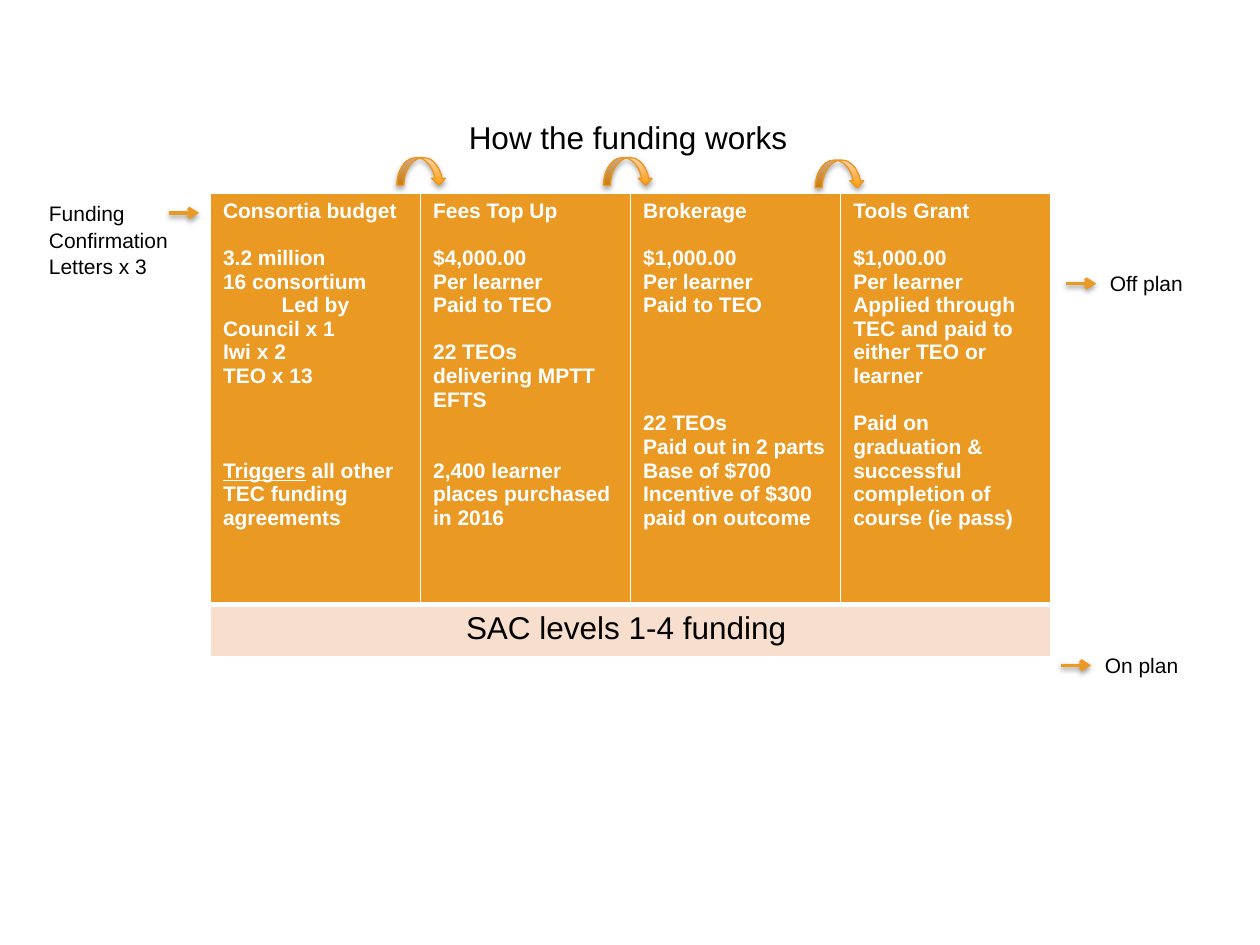
from lxml import etree
from pptx import Presentation
from pptx.dml.color import RGBColor
from pptx.enum.shapes import MSO_CONNECTOR, MSO_SHAPE
from pptx.enum.text import PP_ALIGN
from pptx.oxml import parse_xml
from pptx.oxml.ns import nsdecls, qn
from pptx.util import Inches, Pt

STRAIGHT = MSO_CONNECTOR.STRAIGHT
CURVED_DOWN = MSO_SHAPE.CURVED_DOWN_ARROW
LEFT, CENTER = PP_ALIGN.LEFT, PP_ALIGN.CENTER
FONT = "Arial"
LINE_PT = 13.5
COLORS = {
    "orange": "EA9922", "peach": "F7DECD", "white": "FFFFFF", "black": "000000",
    "outline": "EA971C", "deep": "FF9D0D", "pale": "FFD2B3",
}

# Each column is a list of blocks, set apart by the given number of lines.
COLUMNS = [
    [(0, ["Consortia budget"]),
     (1, ["3.2 million", "16 consortium", "Led by", "Council x 1", "Iwi x 2", "TEO x 13"]),
     (3, ["Triggers all other TEC funding agreements"])],
    [(0, ["Fees Top Up"]),
     (1, ["$4,000.00", "Per learner", "Paid to TEO"]),
     (1, ["22 TEOs delivering MPTT", "EFTS"]),
     (2, ["2,400 learner places purchased in 2016"])],
    [(0, ["Brokerage"]),
     (1, ["$1,000.00", "Per learner", "Paid to TEO"]),
     (4, ["22 TEOs", "Paid out in 2 parts", "Base of $700",
          "Incentive of $300 paid on outcome"])],
    [(0, ["Tools Grant"]),
     (1, ["$1,000.00", "Per learner",
          "Applied through TEC and paid to either TEO or learner"]),
     (1, ["Paid on graduation & successful completion of course (ie pass)"])],
]
CENTERED = {"Led by"}
UNDERLINED = "Triggers"


def rgb(name):
    return RGBColor.from_string(COLORS[name])


def add_run(p, text, size, color="black", bold=False, underline=False):
    r = p.add_run()
    r.text = text
    r.font.name, r.font.size = FONT, Pt(size)
    r.font.bold, r.font.underline = bold, underline
    r.font.color.rgb = rgb(color)


def add_shadow(sp, alpha, dist):
    sp._element.spPr.append(parse_xml(
        f'<a:effectLst {nsdecls("a")}><a:outerShdw blurRad="{Pt(3.1)}" dist="{Pt(dist)}" '
        f'dir="5400000" rotWithShape="0"><a:srgbClr val="{COLORS["black"]}">'
        f'<a:alpha val="{alpha * 1000}"/></a:srgbClr></a:outerShdw></a:effectLst>'))


def add_label(s, left, top, width, height, lines, size=12, align=LEFT, spacing=None):
    tf = s.shapes.add_textbox(
        Inches(left), Inches(top), Inches(width), Inches(height)).text_frame
    tf.word_wrap = True
    for i, line in enumerate(lines):
        p = tf.add_paragraph() if i else tf.paragraphs[0]
        p.alignment, p.line_spacing = align, spacing
        add_run(p, line, size)


def add_pointer(s, left, y):
    """Short arrow to the right."""
    line = s.shapes.add_connector(
        STRAIGHT, Inches(left), Inches(y), Inches(left + 0.24), Inches(y))
    line.line.color.rgb = rgb("orange")
    line.line.width = Pt(2)
    etree.SubElement(line.line._get_or_add_ln(), qn("a:tailEnd"), type="arrow")
    add_shadow(line, 38, 1.6)


def add_hop(s, left, top):
    """Curved arrow from one column to the next."""
    sp = s.shapes.add_shape(
        CURVED_DOWN, Inches(left), Inches(top), Inches(0.39), Inches(0.22))
    sp.fill.gradient()
    sp.fill.gradient_angle = 90
    for stop, name in zip(sp.fill.gradient_stops, ("deep", "pale")):
        stop.color.rgb = rgb(name)
    sp.line.color.rgb = rgb("outline")
    sp.line.width = Pt(0.75)
    add_shadow(sp, 35, 1.8)


def style_cell(cell, fill, top=1, bottom=1):
    cell.fill.solid()
    cell.fill.fore_color.rgb = rgb(fill)
    tcPr = cell._tc.get_or_add_tcPr()
    for i, (side, width) in enumerate(zip("LRTB", (1, 1, top, bottom))):
        tcPr.insert(i, parse_xml(
            f'<a:ln{side} {nsdecls("a")} w="{Pt(width)}"><a:solidFill>'
            f'<a:srgbClr val="{COLORS["white"]}"/></a:solidFill></a:ln{side}>'))


def fill_column(tf, blocks):
    p = tf.paragraphs[0]
    for gap, lines in blocks:
        for i, line in enumerate(lines):
            if gap or i:
                p = tf.add_paragraph()
            p.alignment = CENTER if line in CENTERED else LEFT
            p.line_spacing = Pt(LINE_PT)
            if gap and i == 0:
                p.space_before = Pt(gap * LINE_PT)
            if line.startswith(UNDERLINED):
                add_run(p, UNDERLINED, 12, "white", True, True)
                line = line.removeprefix(UNDERLINED)
            add_run(p, line, 12, "white", True)


def add_funding_table(s, left, top, width, heights):
    table = s.shapes.add_table(
        2, len(COLUMNS), Inches(left), Inches(top), Inches(width),
        Inches(sum(heights))).table
    for row, height in zip(table.rows, heights):
        row.height = Inches(height)
    for i, blocks in enumerate(COLUMNS):
        style_cell(table.cell(0, i), "orange", bottom=3)
        fill_column(table.cell(0, i).text_frame, blocks)
        style_cell(table.cell(1, i), "peach", top=3)
    base = table.cell(1, 0)
    base.merge(table.cell(1, len(COLUMNS) - 1))
    p = base.text_frame.paragraphs[0]
    p.alignment = CENTER
    add_run(p, "SAC levels 1-4 funding ", 18)


def main():
    prs = Presentation()
    prs.slide_width, prs.slide_height = Inches(10), Inches(7.5)
    s = prs.slides.add_slide(prs.slide_layouts[6])

    add_funding_table(s, 1.67, 1.53, 6.67, (3.27, 0.41))
    add_label(s, 1.88, 0.89, 6.21, 0.4, ["How the funding works"], 18, CENTER)
    for left, top in ((3.15, 1.25), (4.79, 1.25), (6.47, 1.27)):
        add_hop(s, left, top)

    add_label(s, 0.29, 1.53, 1.17, 0.71,
              ["Funding Confirmation", "Letters x 3"], spacing=1.06)
    add_pointer(s, 1.34, 1.69)
    for text, left, y in (("On plan", 8.42, 5.28), ("Off plan", 8.46, 2.25)):
        add_pointer(s, left, y)
        add_label(s, left + 0.25, y - 0.15, 0.94, 0.3, [text])

    prs.save("out.pptx")


if __name__ == "__main__":
    main()
